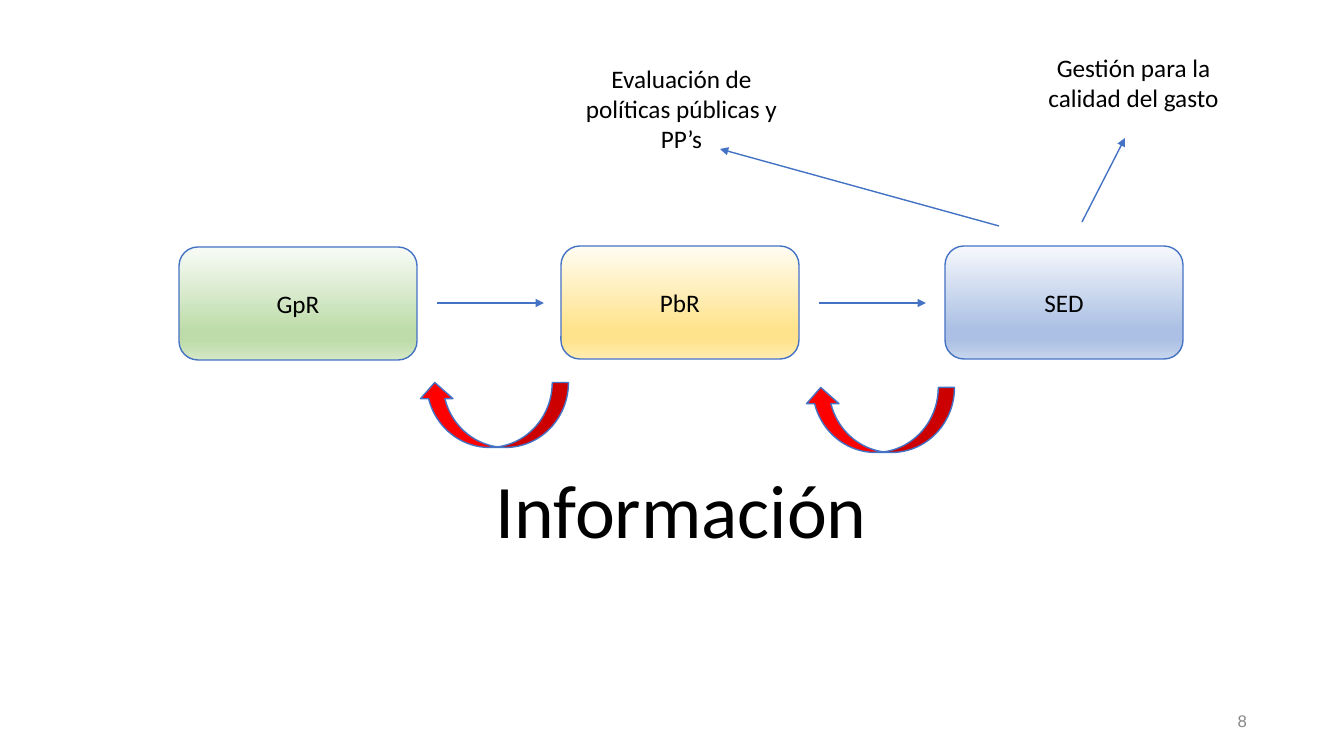
"""Builds the slide linking GpR, PbR and SED through information flows."""
from copy import deepcopy
from dataclasses import dataclass

from lxml.etree import SubElement
from pptx import Presentation
from pptx.dml.color import RGBColor
from pptx.enum.shapes import MSO_CONNECTOR as Connector, MSO_SHAPE as Shape
from pptx.enum.text import MSO_ANCHOR as Anchor, PP_ALIGN as Align
from pptx.oxml.ns import qn
from pptx.util import Pt


@dataclass(frozen=True)
class Theme:
    """Colours, fonts and type sizes of the slide."""
    text: str = "000000"
    muted: str = "888888"
    outline: str = "4472C4"
    arrow: str = "FF0000"
    green: tuple = ("F8FBF6", "BEDCAA", "BEDCAA", "D4E8C6")
    yellow: tuple = ("FFFCF2", "FFE38C", "FFE38C", "FFECB2")
    blue: tuple = ("F6F8FC", "ABC0E4", "ABC0E4", "C7D5ED")
    stops: tuple = (0, 0.74, 0.83, 1)
    font: str = "Calibri"
    number_font: str = "Arial"
    body: int = 18
    headline: int = 54
    small: int = 12
    line: int = 1


def px(value):
    """Turn pixels into EMU."""
    return round(value * 914400 / 100.8)


class SlideBuilder:
    """Draws themed elements on the current slide."""

    def __init__(self, deck, theme):
        self.theme = theme
        self.page = deck.slides.add_slide(deck.slide_layouts[6])

    def outline(self, item):
        item.line.color.rgb = RGBColor.from_string(self.theme.outline)
        item.line.width = Pt(self.theme.line)

    def set_text(self, box, text, inset=5, **changes):
        style = {"size": self.theme.body, "name": self.theme.font,
                 "color": self.theme.text, "align": Align.CENTER,
                 "anchor": Anchor.TOP, "wrap": True} | changes
        frame = box.text_frame
        layout = {"word_wrap": style["wrap"], "vertical_anchor": style["anchor"]}
        sides = ("left", "right", "top", "bottom")
        layout |= {f"margin_{side}": px(inset) for side in sides}
        for name, value in layout.items():
            setattr(frame, name, value)
        para = frame.paragraphs[0]
        para.alignment = style["align"]
        span = para.add_run()
        span.text = text
        for name, value in {"size": Pt(style["size"]), "name": style["name"]}.items():
            setattr(span.font, name, value)
        span.font.color.rgb = RGBColor.from_string(style["color"])

    def label(self, text, area, **changes):
        box = self.page.shapes.add_textbox(*map(px, area))
        self.set_text(box, text, **changes)

    def shape(self, kind, area):
        item = self.page.shapes.add_shape(kind, *map(px, area))
        item.shadow.inherit = False
        self.outline(item)
        return item

    def stage(self, text, area, colours):
        box = self.shape(Shape.ROUNDED_RECTANGLE, area)
        box.fill.gradient()
        box.fill.gradient_angle = 270
        stop_list = box.element.spPr.find(f".//{qn('a:gsLst')}")
        for _ in range(len(colours) - len(stop_list)):
            stop_list.append(deepcopy(stop_list[0]))
        for stop, position, colour in zip(box.fill.gradient_stops, self.theme.stops, colours):
            stop.position = position
            stop.color.rgb = RGBColor.from_string(colour)
        self.set_text(box, text, anchor=Anchor.MIDDLE)

    def return_arrow(self, area):
        item = self.shape(Shape.CURVED_LEFT_ARROW, area)
        item.rotation = 90
        item.fill.solid()
        item.fill.fore_color.rgb = RGBColor.from_string(self.theme.arrow)

    def arrow(self, *ends):
        item = self.page.shapes.add_connector(Connector.STRAIGHT, *map(px, ends))
        self.outline(item)
        properties = item.element.spPr
        SubElement(properties.find(qn("a:ln")), qn("a:tailEnd"), type="triangle")
        SubElement(properties, qn("a:effectLst"))


def main():
    deck = Presentation()
    deck.slide_width, deck.slide_height = px(1344), px(756)
    theme = Theme()
    slide = SlideBuilder(deck, theme)

    stages = (("GpR", 179, 247, theme.green), ("PbR", 561, 246, theme.yellow),
              ("SED", 945, 246, theme.blue))
    for text, left, top, colours in stages:
        slide.stage(text, (left, top, 238, 113), colours)

    for ends in ((437, 303, 544, 303), (819, 303, 926, 303),
                 (999, 226, 720, 149), (1082, 222, 1125, 138)):
        slide.arrow(*ends)

    for left, top in ((847, 345), (461, 340)):
        slide.return_arrow((left, top, 65, 150))

    slide.label("Evaluación de políticas públicas y PP’s", (564, 58, 235, 102))
    slide.label("Gestión para la calidad del gasto", (1016, 47, 235, 72))
    slide.label("Información", (482, 453, 398, 102), inset=10,
                size=theme.headline, wrap=False)
    slide.label("8", (1223, 706, 29, 29), size=theme.small, name=theme.number_font,
                color=theme.muted, align=Align.RIGHT, anchor=Anchor.MIDDLE, wrap=False)
    deck.save("out.pptx")


if __name__ == "__main__":
    main()
